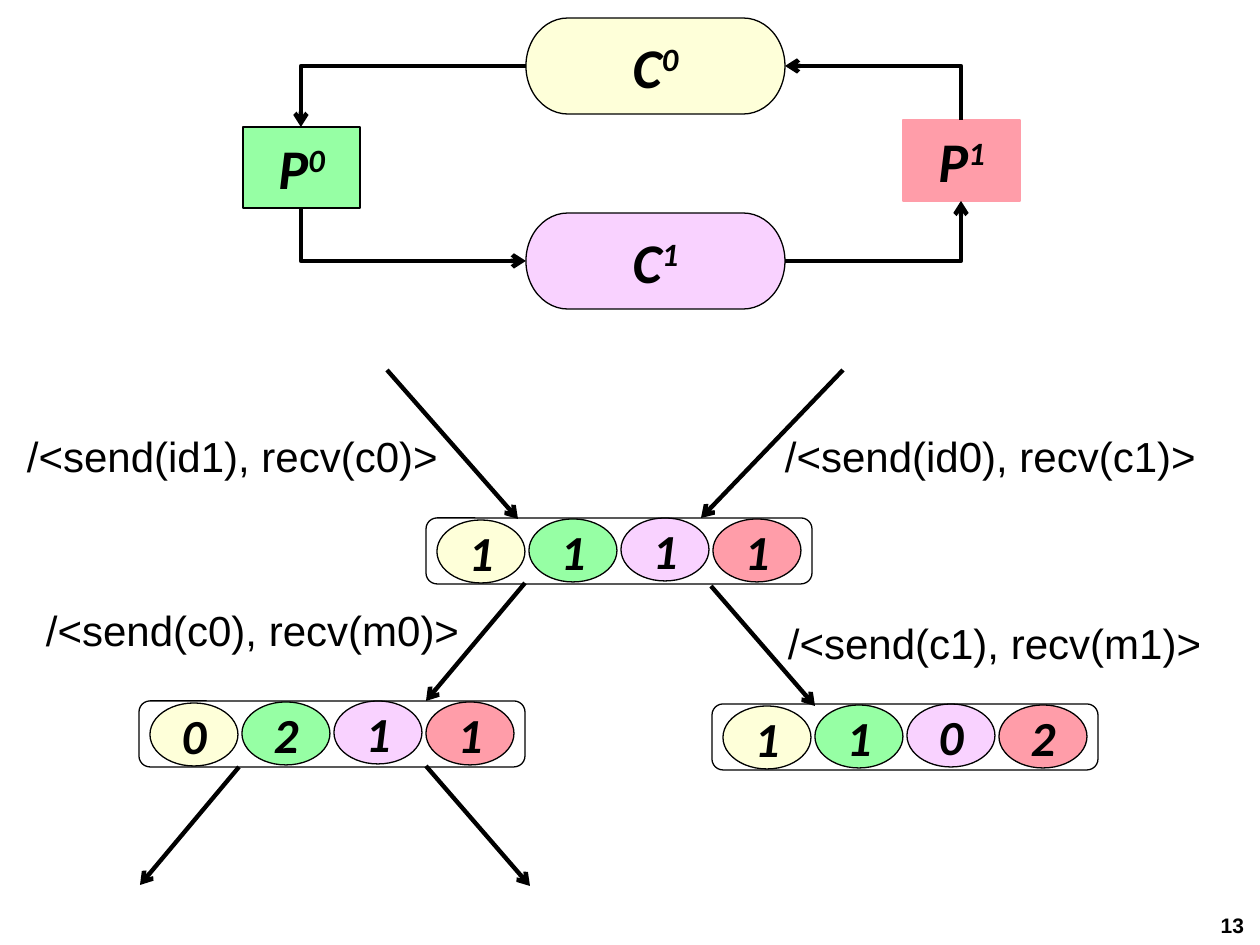
from lxml.etree import SubElement
from pptx import Presentation
from pptx.dml.color import RGBColor
from pptx.enum.shapes import MSO_CONNECTOR, MSO_SHAPE
from pptx.enum.text import MSO_ANCHOR, PP_ALIGN
from pptx.oxml.ns import qn
from pptx.util import Pt

PX = 914400 / 126
BLACK, CREAM, GREEN, LILAC, PINK = "000000", "FEFFD9", "96FFA4", "F9D2FF", "FF9DA9"
RECT, PILL = MSO_SHAPE.RECTANGLE, MSO_SHAPE.FLOWCHART_TERMINATOR

NODES = [
    ("P", "0", RECT, (243, 127, 117, 81), GREEN, BLACK, 0, 6),
    ("P", "1", RECT, (903, 120, 117, 81), PINK, PINK, 0, 6),
    ("C", "0", PILL, (526, 18, 259, 96), CREAM, BLACK, 0.75, 0),
    ("C", "1", PILL, (526, 213, 259, 96), LILAC, BLACK, 0.75, 0),
]
BENDS = [
    ((526, 66), (301, 127), False),
    ((301, 208), (526, 261), True),
    ((785, 261), (961, 201), False),
    ((961, 120), (785, 66), True),
]
STATES = [(426, 518, "1111"), (139, 701, "0211"), (712, 704, "1102")]
TOKENS = [(CREAM, 2), (GREEN, 1), (LILAC, 0), (PINK, 1)]
ARROWS = [
    ((387, 370), (518, 519)),
    ((843, 370), (701, 518)),
    ((525, 583), (426, 701)),
    ((711, 586), (815, 706)),
    ((239, 767), (140, 885)),
    ((426, 766), (530, 886)),
]
LABELS = [
    ("/<send(id1), recv(c0)>", 14, 425),
    ("/<send(id0), recv(c1)>", 772, 425),
    ("/<send(c0), recv(m0)>", 33, 599),
    ("/<send(c1), recv(m1)>", 775, 612),
]


def emu(*px):
    return [round(v * PX) for v in px]


def rgb(color):
    return RGBColor.from_string(color)


def write(sp, text, size=24, font="Arial", bold=False, italic=False, sup="",
          align=PP_ALIGN.LEFT, anchor=MSO_ANCHOR.TOP, inset=(13, 6), before=0, wrap=False):
    tf = sp.text_frame
    tf.word_wrap, tf.vertical_anchor = wrap, anchor
    tf.margin_left, tf.margin_top = tf.margin_right, tf.margin_bottom = emu(*inset)
    p = tf.paragraphs[0]
    p.alignment, p.space_before = align, Pt(before)
    for part in filter(None, (text, sup)):
        r = p.add_run()
        r.text = part
        r.font.name, r.font.size = font, Pt(size)
        r.font.bold, r.font.italic = bold, italic
        r.font.color.rgb = rgb(BLACK)
        if part is sup:
            r.font._element.set("baseline", "30000")


def shape(s, kind, box, fill=None, line=BLACK, width=0.75):
    sp = s.shapes.add_shape(kind, *emu(*box))
    sp.shadow.inherit = False
    if fill:
        sp.fill.solid()
        sp.fill.fore_color.rgb = rgb(fill)
    else:
        sp.fill.background()
    sp.line.color.rgb, sp.line.width = rgb(line), Pt(width)
    return sp


def arrow(s, start, end, kind=MSO_CONNECTOR.STRAIGHT):
    c = s.shapes.add_connector(kind, *emu(*start, *end))
    c.line.color.rgb, c.line.width = rgb(BLACK), Pt(2.5)
    SubElement(c.line._get_or_add_ln(), qn("a:tailEnd"), type="arrow")
    SubElement(c._element.spPr, qn("a:effectLst"))
    return c


def bend(s, start, end, vertical_first):
    (x1, y1), (x2, y2) = start, end
    if vertical_first:
        cx, cy, dx, dy = (x1 + x2) / 2, (y1 + y2) / 2, y1 - y2, x2 - x1
        start, end = (cx - dx / 2, cy - dy / 2), (cx + dx / 2, cy + dy / 2)
    spPr = arrow(s, start, end, MSO_CONNECTOR.ELBOW)._element.spPr
    spPr.find(qn("a:prstGeom")).set("prst", "bentConnector2")
    if vertical_first:
        spPr.find(qn("a:xfrm")).set("rot", str(270 * 60000))


def label(s, text, box, **fmt):
    write(s.shapes.add_textbox(*emu(*box)), text, **fmt)


def main():
    """Build the slide of channels, processes and their state tree."""
    prs = Presentation()
    prs.slide_width, prs.slide_height = emu(1260, 945)
    s = prs.slides.add_slide(prs.slide_layouts[6])
    strong = dict(font="Calibri", bold=True, italic=True, align=PP_ALIGN.CENTER, wrap=True)
    for text, sup, kind, box, fill, line, width, top in NODES:
        sp = shape(s, kind, box, fill, line, width)
        write(sp, text, sup=sup, size=32, inset=(13, top), before=6.4, **strong)
    for start, end, vertical_first in BENDS:
        bend(s, start, end, vertical_first)
    for x, y, counts in STATES:
        for i, (count, (fill, dy)) in enumerate(zip(counts, TOKENS)):
            sp = shape(s, MSO_SHAPE.OVAL, (x + 11 + 92 * i, y + dy, 88, 63), fill)
            write(sp, count, size=28, inset=(0, 0), before=5.6,
                  anchor=MSO_ANCHOR.MIDDLE, **strong)
        shape(s, MSO_SHAPE.ROUNDED_RECTANGLE, (x, y, 386, 66))
    for start, end in ARROWS:
        arrow(s, start, end)
    for text, x, y in LABELS:
        label(s, text, (x, y, 441, 63))
    label(s, "13", (1178, 907, 79, 38), size=12, bold=True, align=PP_ALIGN.RIGHT, wrap=True)
    prs.save("out.pptx")


if __name__ == "__main__":
    main()
